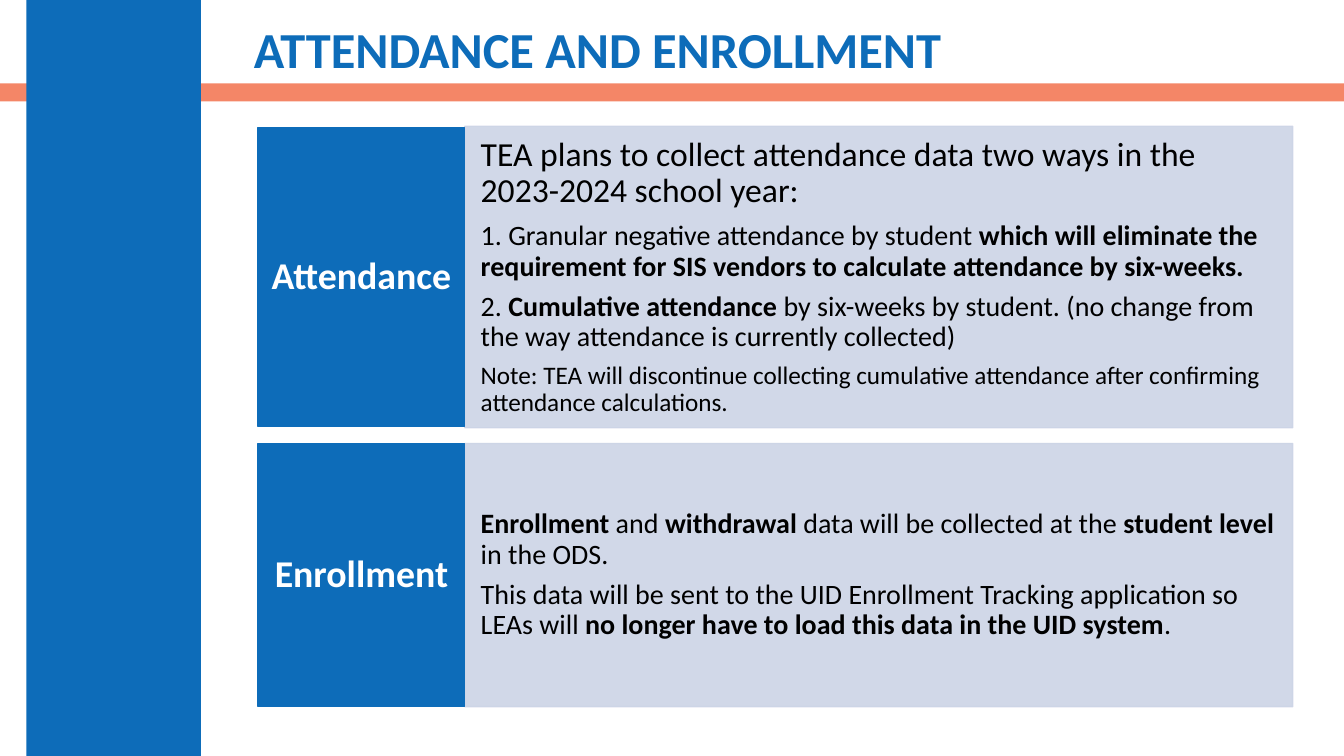
import pptx
import pptx.util
import pptx.dml.color
import pptx.enum.shapes
import pptx.enum.text
import pptx.oxml.ns
import lxml.etree

Pt = pptx.util.Pt
RGBColor = pptx.dml.color.RGBColor
PP_ALIGN = pptx.enum.text.PP_ALIGN

BLUE = RGBColor(0x0D, 0x6C, 0xB9)
CORAL = RGBColor(0xF1, 0x60, 0x38)
PALE = RGBColor(0xCC, 0xD4, 0xE6)
WHITE = RGBColor(0xFF, 0xFF, 0xFF)
BLACK = RGBColor(0, 0, 0)
FONT = "Calibri"

LABEL_LEFT, LABEL_WIDTH = 184.4, 147.6
BODY_LEFT, BODY_WIDTH = LABEL_LEFT + LABEL_WIDTH, 591.4

# Each row: label, label top and height, body top and height, paragraphs.
# A paragraph is a size and its text; ** switches bold on and off.
ROWS = [
    ("Attendance", 91.2, 213.4, 90.2, 215.4, [
        (24, "TEA plans to collect attendance data two ways in the "
             "2023-2024 school year:"),
        (20, "1. Granular negative attendance by student **which will "
             "eliminate the requirement for SIS vendors to calculate "
             "attendance by six-weeks.**"),
        (20, "2. **Cumulative attendance **by six-weeks by student. (no "
             "change from the way attendance is currently collected)"),
        (18, "Note: TEA will discontinue collecting cumulative attendance "
             "after confirming attendance calculations."),
    ]),
    ("Enrollment", 316.8, 188, 316.8, 188, [
        (20, "**Enrollment** and **withdrawal** data will be collected at "
             "the **student level **in the ODS."),
        (20, "This data will be sent to the UID Enrollment Tracking "
             "application so LEAs will **no longer have to load this data "
             "in the UID system**."),
    ]),
]


def set_alpha(fill_parent, percent):
    """Make the solid colour under an element partly transparent."""
    for color in fill_parent.iter(pptx.oxml.ns.qn("a:srgbClr")):
        alpha = lxml.etree.SubElement(color, pptx.oxml.ns.qn("a:alpha"))
        alpha.set("val", str(percent * 1000))


def add_rect(s, left, top, width, height, color, outlined=False, alpha=100):
    sp = s.shapes.add_shape(pptx.enum.shapes.MSO_SHAPE.RECTANGLE,
                            Pt(left), Pt(top), Pt(width), Pt(height))
    sp.shadow.inherit = False
    sp.fill.solid()
    sp.fill.fore_color.rgb = color
    if outlined:
        sp.line.color.rgb = color
        sp.line.width = Pt(1)
    else:
        sp.line.fill.background()
    if alpha < 100:
        set_alpha(sp._element.spPr, alpha)
    return sp


def write_text(sp, paragraphs, color, inset, align=PP_ALIGN.LEFT,
               space_ratio=0.35):
    tf = sp.text_frame
    tf.word_wrap = True
    tf.vertical_anchor = pptx.enum.text.MSO_ANCHOR.MIDDLE
    tf.margin_left = tf.margin_right = Pt(inset)
    tf.margin_top = tf.margin_bottom = 0
    for i, (size, text) in enumerate(paragraphs):
        p = tf.add_paragraph() if i else tf.paragraphs[0]
        p.alignment = align
        p.line_spacing = 0.9
        p.space_after = Pt(size * space_ratio)
        for j, part in enumerate(text.split("**")):
            if part:
                r = p.add_run()
                r.text = part
                r.font.name = FONT
                r.font.size = Pt(size)
                r.font.bold = j % 2 == 1
                r.font.color.rgb = color


def add_row(s, label, label_top, label_height, top, height, paragraphs):
    body = add_rect(s, BODY_LEFT, top, BODY_WIDTH, height, PALE, True, 90)
    write_text(body, paragraphs, BLACK, 11.4)
    head = add_rect(s, LABEL_LEFT, label_top, LABEL_WIDTH, label_height,
                    BLUE, True)
    write_text(head, [(27, f"**{label}**")], WHITE, 7.8, PP_ALIGN.CENTER)


def add_title(s, text):
    sp = s.shapes.add_textbox(Pt(174.2), Pt(15.8), Pt(749.5), Pt(42.5))
    write_text(sp, [(36, f"**{text}**")], BLUE, 7.2, space_ratio=0)


def main():
    prs = pptx.Presentation()
    prs.slide_width, prs.slide_height = Pt(960), Pt(540)
    s = prs.slides.add_slide(prs.slide_layouts[6])

    # Background bands
    add_rect(s, 0, 59.6, 960, 12.8, CORAL, alpha=76)
    add_rect(s, 18.9, 0, 124.6, 540, BLUE)

    # Topic rows and title
    for row in ROWS:
        add_row(s, *row)
    add_title(s, "ATTENDANCE AND ENROLLMENT")

    prs.save("out.pptx")


if __name__ == "__main__":
    main()
